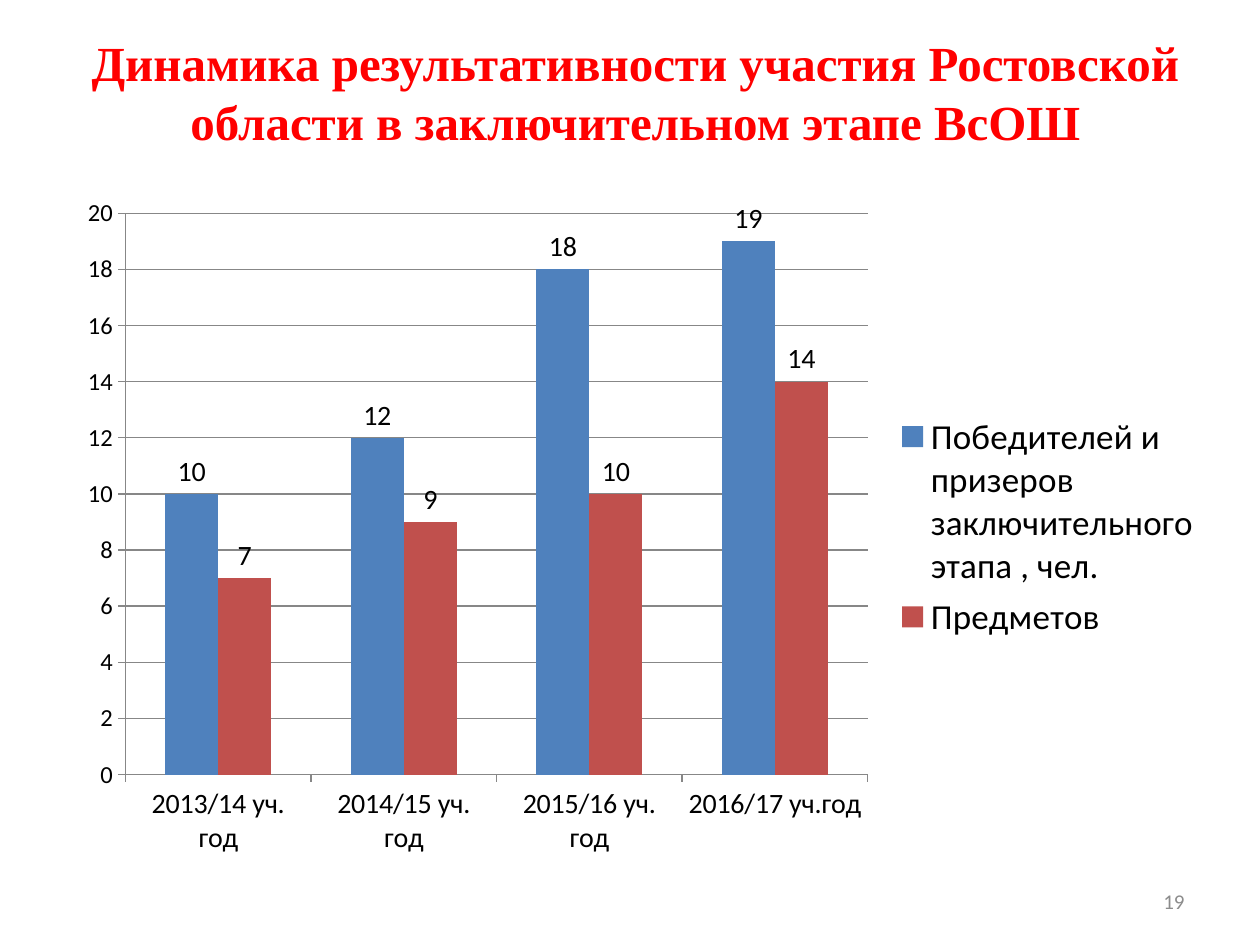
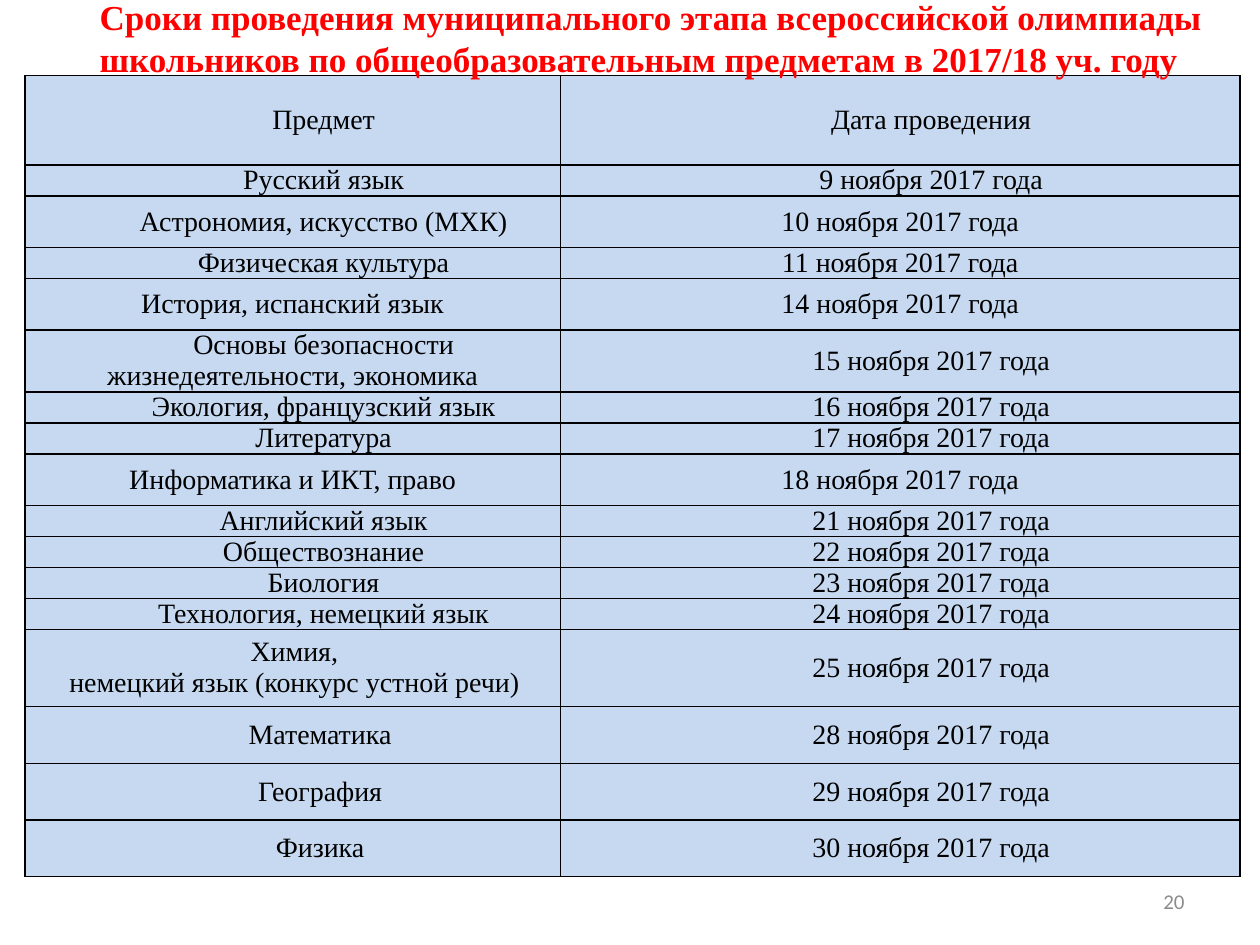
import pptx
import pptx.chart.data
import pptx.dml.color
import pptx.enum.chart
import pptx.enum.text
import pptx.oxml.ns
import pptx.util
from lxml import etree

Pt = pptx.util.Pt
RGBColor = pptx.dml.color.RGBColor
Align = pptx.enum.text.PP_ALIGN
Anchor = pptx.enum.text.MSO_ANCHOR

RED = RGBColor(0xFF, 0x00, 0x00)
BLACK = RGBColor(0x00, 0x00, 0x00)
GRAY = RGBColor(0x8C, 0x8C, 0x8C)
AXIS_GRAY = RGBColor(0x87, 0x87, 0x87)
PALE_BLUE = RGBColor(0xC6, 0xD9, 0xF1)
BLUE = RGBColor(0x4F, 0x81, 0xBD)
BRICK = RGBColor(0xC0, 0x50, 0x4D)

SERIF = "Times New Roman"
SANS = "Calibri"
INDENT = 35.4
SHORT_INDENT = 31.4
LINE = 17.7
MEDIUM, TALL = 29.5, 32.4

YEARS = ["2013/14 уч. год", "2014/15 уч. год", "2015/16 уч. год", "2016/17 уч.год"]
RESULTS = [
    ("Победителей и призеров заключительного этапа , чел.", (10, 12, 18, 19), BLUE),
    ("Предметов", (7, 9, 10, 14), BRICK),
]

HEADER = (51, "Предмет", INDENT, "Дата проведения", INDENT)
SCHEDULE = [
    (LINE, "Русский язык", INDENT, 9, INDENT),
    (MEDIUM, "Астрономия, искусство (МХК)", INDENT, 10, 0),
    (LINE, "Физическая культура", INDENT, 11, 0),
    (MEDIUM, "История, испанский язык", 0, 14, 0),
    (2 * LINE, "Основы безопасности жизнедеятельности, экономика", INDENT, 15, INDENT),
    (LINE, "Экология, французский язык", INDENT, 16, INDENT),
    (LINE, "Литература", INDENT, 17, INDENT),
    (MEDIUM, "Информатика и ИКТ, право", 0, 18, 0),
    (LINE, "Английский язык", INDENT, 21, INDENT),
    (LINE, "Обществознание", INDENT, 22, INDENT),
    (LINE, "Биология", INDENT, 23, INDENT),
    (LINE, "Технология, немецкий язык", INDENT, 24, INDENT),
    (44, "Химия,\nнемецкий язык (конкурс устной речи)", 2, 25, INDENT),
    (TALL, "Математика", SHORT_INDENT, 28, INDENT),
    (TALL, "География", SHORT_INDENT, 29, INDENT),
    (TALL, "Физика", SHORT_INDENT, 30, INDENT),
]


def set_font(font, name, size, color, bold=False):
    font.name = name
    font.size = Pt(size)
    font.color.rgb = color
    font.bold = bold


def write_text(frame, text, alignment, name, size, color, bold=False, indent=0):
    frame.text = text
    for paragraph in frame.paragraphs:
        paragraph.alignment = alignment
        if indent:
            properties = paragraph._p.get_or_add_pPr()
            properties.set("marL", "0")
            properties.set("indent", str(int(Pt(indent))))
        set_font(paragraph.font, name, size, color, bold)


def add_text(slide, box, anchor, *style, **options):
    frame = slide.shapes.add_textbox(*map(Pt, box)).text_frame
    frame.word_wrap = True
    frame.vertical_anchor = anchor
    write_text(frame, *style, **options)
    return frame


def add_title(slide, box, anchor, text, alignment, size, indent=0):
    return add_text(slide, box, anchor, text, alignment, SERIF, size, RED,
                    bold=True, indent=indent)


def add_page_number(slide, number):
    add_text(slide, (516, 500.5, 168, 28.75), Anchor.MIDDLE,
             str(number), Align.RIGHT, SANS, 12, GRAY)


def style_axis(axis, size):
    axis.major_tick_mark = pptx.enum.chart.XL_TICK_MARK.OUTSIDE
    axis.minor_tick_mark = pptx.enum.chart.XL_TICK_MARK.NONE
    axis.format.line.color.rgb = AXIS_GRAY
    set_font(axis.tick_labels.font, SANS, size, BLACK)


def add_results_chart(slide):
    data = pptx.chart.data.CategoryChartData()
    data.categories = YEARS
    for name, values, color in RESULTS:
        data.add_series(name, values)
    chart = slide.shapes.add_chart(
        pptx.enum.chart.XL_CHART_TYPE.COLUMN_CLUSTERED,
        Pt(37), Pt(105.5), Pt(657.5), Pt(391), data).chart
    set_font(chart.font, SANS, 10, BLACK)
    chart.has_title = False

    style_axis(chart.category_axis, 16)
    value_axis = chart.value_axis
    style_axis(value_axis, 14)
    value_axis.minimum_scale = 0
    value_axis.maximum_scale = 20
    value_axis.major_unit = 2
    value_axis.has_major_gridlines = True
    value_axis.major_gridlines.format.line.color.rgb = AXIS_GRAY

    chart.has_legend = True
    chart.legend.position = pptx.enum.chart.XL_LEGEND_POSITION.RIGHT
    chart.legend.include_in_layout = False
    set_font(chart.legend.font, SANS, 20, BLACK)

    plot = chart.plots[0]
    plot.gap_width = 150
    plot.overlap = 0
    plot.vary_by_categories = False
    for series, (name, values, color) in zip(plot.series, RESULTS):
        series.format.fill.solid()
        series.format.fill.fore_color.rgb = color
        labels = series.data_labels
        labels.show_value = True
        labels.position = pptx.enum.chart.XL_LABEL_POSITION.OUTSIDE_END
        set_font(labels.font, SANS, 16, BLACK)


def add_borders(cell):
    properties = cell._tc.get_or_add_tcPr()
    qn = pptx.oxml.ns.qn
    for position, side in enumerate(("a:lnL", "a:lnR", "a:lnT", "a:lnB")):
        line = etree.Element(qn(side), w=str(int(Pt(1))))
        fill = etree.SubElement(line, qn("a:solidFill"))
        etree.SubElement(fill, qn("a:srgbClr"), val=str(BLACK))
        properties.insert(position, line)


def fill_cell(cell, text, indent):
    cell.margin_left = cell.margin_right = Pt(5)
    cell.margin_top = cell.margin_bottom = 0
    cell.vertical_anchor = Anchor.MIDDLE
    cell.fill.solid()
    cell.fill.fore_color.rgb = PALE_BLUE
    add_borders(cell)
    write_text(cell.text_frame, text, Align.CENTER, SERIF, 16, BLACK, indent=indent)
    for paragraph in cell.text_frame.paragraphs:
        paragraph.line_spacing = Pt(LINE)


def add_schedule_table(slide):
    rows = [HEADER] + [
        (height, subject, subject_indent, f"{day} ноября 2017 года", date_indent)
        for height, subject, subject_indent, day, date_indent in SCHEDULE
    ]
    total_height = sum(row[0] for row in rows)
    table = slide.shapes.add_table(
        len(rows), 2, Pt(14.2), Pt(43.2), Pt(694.4), Pt(total_height)).table
    table.first_row = False
    table.horz_banding = False
    table.columns[0].width = Pt(306)
    table.columns[1].width = Pt(388.4)
    for index, (height, subject, subject_indent, date, date_indent) in enumerate(rows):
        table.rows[index].height = Pt(height)
        fill_cell(table.cell(index, 0), subject, subject_indent)
        fill_cell(table.cell(index, 1), date, date_indent)


def main():
    presentation = pptx.Presentation()
    presentation.slide_width = Pt(720)
    presentation.slide_height = Pt(540)
    blank = presentation.slide_layouts[6]

    slide = presentation.slides.add_slide(blank)
    add_page_number(slide, 19)
    add_results_chart(slide)
    add_title(slide, (20, 15, 686, 85), Anchor.TOP,
              "Динамика результативности участия Ростовской области "
              "в заключительном этапе ВсОШ", Align.CENTER, 28)

    slide = presentation.slides.add_slide(blank)
    add_schedule_table(slide)
    add_page_number(slide, 20)
    frame = add_title(slide, (14.4, 0, 705, 43), Anchor.MIDDLE,
                      "Сроки проведения муниципального этапа всероссийской олимпиады\n"
                      "школьников по общеобразовательным предметам в 2017/18 уч. году",
                      Align.LEFT, 20, INDENT)
    frame.margin_top = frame.margin_bottom = 0

    presentation.save("out.pptx")


if __name__ == "__main__":
    main()
